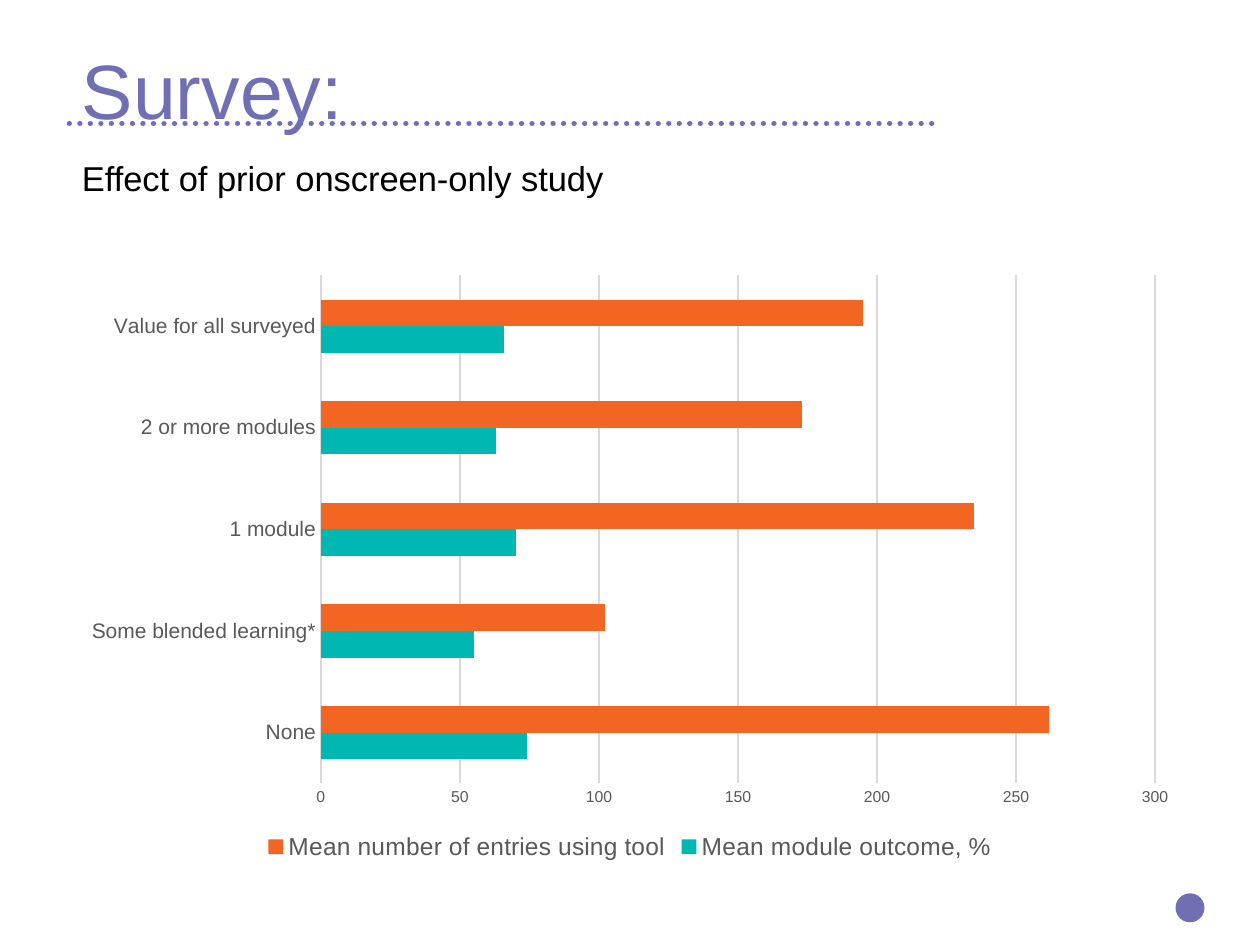
import pptx
import pptx.chart.data
import pptx.dml.color
import pptx.enum.chart
import pptx.enum.dml
import pptx.enum.shapes
import pptx.enum.text
import pptx.oxml.ns
import pptx.util
from lxml import etree

WIDTH, HEIGHT = 10, 7.5
MARGIN = 0.055 * WIDTH
HEADING_WIDTH = 0.731 * WIDTH
FONT = "Arial"
COLORS = {
    "accent": "716FB3",
    "text": "000000",
    "label": "595959",
    "grid": "D9D9D9",
    "outcome": "00B7B2",
    "entries": "F26522",
}
CATEGORIES = ["None", "Some blended learning*", "1 module",
              "2 or more modules", "Value for all surveyed"]
SERIES = [
    ("Mean module outcome, %", [74, 55, 70, 63, 66], "outcome"),
    ("Mean number of entries using tool", [262, 102, 235, 173, 195], "entries"),
]


def rgb(name):
    return pptx.dml.color.RGBColor.from_string(COLORS[name])


def inches(*lengths):
    return [pptx.util.Inches(length) for length in lengths]


def style_font(font, size, color):
    font.name = FONT
    font.size = pptx.util.Pt(size)
    font.color.rgb = rgb(color)


def style_line(line, color, width):
    line.color.rgb = rgb(color)
    line.width = pptx.util.Pt(width)


def write_text(holder, text, *, top, height, size, color, inset, spacing=1.0):
    """Place a heading placeholder at the left margin and fill it."""
    holder.left, holder.top, holder.width, holder.height = inches(
        MARGIN, top, HEADING_WIDTH, height)
    frame = holder.text_frame
    frame.word_wrap = True
    frame.auto_size = pptx.enum.text.MSO_AUTO_SIZE.NONE
    frame.vertical_anchor = pptx.enum.text.MSO_ANCHOR.TOP
    frame.margin_top, frame.margin_bottom = inches(inset, 0)
    paragraph = frame.paragraphs[0]
    paragraph.alignment = pptx.enum.text.PP_ALIGN.LEFT
    paragraph.line_spacing = spacing
    paragraph.space_before = pptx.util.Pt(0)
    run = paragraph.add_run()
    run.text = text
    style_font(run.font, size, color)


def add_dotted_rule(slide, left, right, y):
    rule = slide.shapes.add_connector(
        pptx.enum.shapes.MSO_CONNECTOR.STRAIGHT, *inches(left, y, right, y))
    style_line(rule.line, "accent", 3)
    rule.line.dash_style = pptx.enum.dml.MSO_LINE.ROUND_DOT
    properties = rule._element.spPr
    properties.find(pptx.oxml.ns.qn("a:ln")).set("cap", "rnd")
    etree.SubElement(properties, pptx.oxml.ns.qn("a:effectLst"))


def add_page_dot(slide, left, top, size):
    dot = slide.shapes.add_shape(
        pptx.enum.shapes.MSO_SHAPE.OVAL, *inches(left, top, size, size))
    dot.shadow.inherit = False
    dot.fill.solid()
    dot.fill.fore_color.rgb = rgb("accent")
    dot.line.fill.background()


def style_axis(axis, size):
    axis.major_tick_mark = pptx.enum.chart.XL_TICK_MARK.NONE
    axis.minor_tick_mark = pptx.enum.chart.XL_TICK_MARK.NONE
    style_font(axis.tick_labels.font, size, "label")


def add_survey_chart(slide, top, height):
    data = pptx.chart.data.CategoryChartData(number_format="General")
    data.categories = CATEGORIES
    for name, values, _ in SERIES:
        data.add_series(name, values)
    chart = slide.shapes.add_chart(
        pptx.enum.chart.XL_CHART_TYPE.BAR_CLUSTERED,
        *inches(MARGIN, top, WIDTH - 2 * MARGIN, height), data).chart
    chart.has_title = False
    style_font(chart.font, 10, "text")

    plot = chart.plots[0]
    plot.gap_width = 182
    plot.vary_by_categories = False
    for series, (_, _, color) in zip(plot.series, SERIES):
        series.format.fill.solid()
        series.format.fill.fore_color.rgb = rgb(color)

    style_axis(chart.category_axis, 12)
    style_line(chart.category_axis.format.line, "grid", 0.75)
    values_axis = chart.value_axis
    style_axis(values_axis, 9)
    values_axis.minimum_scale, values_axis.maximum_scale = 0, 300
    values_axis.major_unit = 50
    values_axis.format.line.fill.background()
    style_line(values_axis.major_gridlines.format.line, "grid", 0.75)

    chart.has_legend = True
    chart.legend.position = pptx.enum.chart.XL_LEGEND_POSITION.BOTTOM
    chart.legend.include_in_layout = False
    style_font(chart.legend.font, 14, "label")


def main():
    deck = pptx.Presentation()
    deck.slide_width, deck.slide_height = inches(WIDTH, HEIGHT)
    slide = deck.slides.add_slide(deck.slide_layouts[0])
    title, subtitle = slide.placeholders
    write_text(title, "Survey:", top=0.32, height=0.64, size=44,
               color="accent", inset=0.1, spacing=0.9)
    write_text(subtitle, "Effect of prior onscreen-only study", top=1.19,
               height=0.43, size=19.7, color="text", inset=0.06)
    add_dotted_rule(slide, MARGIN, 0.747 * WIDTH, 0.98)
    add_page_dot(slide, 9.33, 7.09, 0.23)
    add_survey_chart(slide, top=2.09, height=4.78)
    deck.save("out.pptx")


if __name__ == "__main__":
    main()
